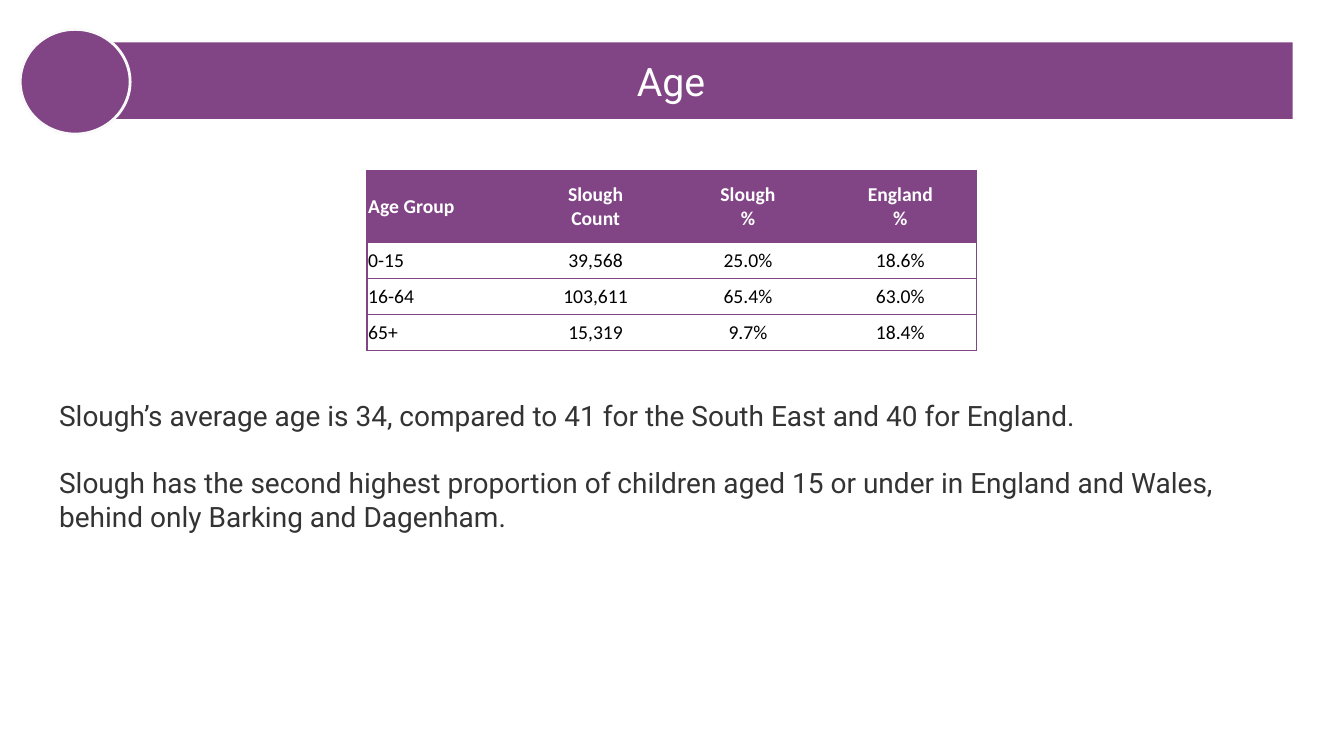
"""Build the slide on the age profile of Slough."""
from dataclasses import dataclass

from lxml import etree
from pptx import Presentation
from pptx.dml.color import RGBColor
from pptx.enum import shapes, text
from pptx.oxml import ns
from pptx.util import Cm, Length, Pt

PURPLE = RGBColor(0x81, 0x44, 0x85)
WHITE = RGBColor(0xFF, 0xFF, 0xFF)
OFF_WHITE = RGBColor(0xFA, 0xFA, 0xFA)
BLACK = RGBColor(0x00, 0x00, 0x00)
DARK_GREY = RGBColor(0x33, 0x33, 0x33)

LEFT, CENTRE = text.PP_ALIGN.LEFT, text.PP_ALIGN.CENTER


@dataclass(frozen=True)
class Style:
    """Look of a run of text."""
    font: str
    size: Length
    colour: RGBColor
    bold: bool = False


@dataclass(frozen=True)
class Box:
    """Place and size of an element."""
    left: Length
    top: Length
    width: Length
    height: Length


TITLE = Style("Roboto", Pt(28), WHITE)
FINDING = Style("Roboto", Pt(20), DARK_GREY)
HEADING = Style("Calibri", Pt(14), WHITE, True)
FIGURE = Style("Calibri", Pt(14), BLACK)

BANNER_BOX = Box(Cm(1.24), Cm(1.07), Cm(31.34), Cm(1.93))
BADGE_BOX = Box(Cm(0.51), Cm(0.74), Cm(2.77), Cm(2.64))
AGE_TABLE_BOX = Box(Cm(9.25), Cm(4.29), Cm(15.36), Cm(4.52))
FINDINGS_BOX = Box(Cm(1.24), Cm(9.91), Cm(31.34), Cm(4.52))
HEADING_HEIGHT, GROUP_HEIGHT = Cm(1.81), Cm(0.91)

AGE_GROUPS = [
    ["Age Group", "Slough\nCount", "Slough\n%", "England\n%"],
    ["0-15", "39,568", "25.0%", "18.6%"],
    ["16-64", "103,611", "65.4%", "63.0%"],
    ["65+", "15,319", "9.7%", "18.4%"],
]
FINDINGS = [
    "Slough’s average age is 34, compared to 41 for the South East and 40 for England.",
    "Slough has the second highest proportion of children aged 15 or under in England "
    "and Wales, behind only Barking and Dagenham.",
]


def write(frame, lines: list[str], style: Style, align=LEFT, gap: Length = Pt(0)) -> None:
    """Write one paragraph per line, with a gap between them."""
    frame.word_wrap = True
    for index, line in enumerate(lines):
        paragraph = frame.add_paragraph() if index else frame.paragraphs[0]
        paragraph.alignment = align
        if index and gap:
            paragraph.space_before = gap
        run = paragraph.add_run()
        run.text = line
        run.font.name, run.font.size = style.font, style.size
        run.font.bold, run.font.color.rgb = style.bold, style.colour


def add_purple_shape(slide, kind, box: Box):
    """Add a flat purple shape without outline."""
    shape = slide.shapes.add_shape(kind, box.left, box.top, box.width, box.height)
    shape.shadow.inherit = False
    shape.fill.solid()
    shape.fill.fore_color.rgb = PURPLE
    shape.line.fill.background()
    return shape


def set_borders(cell, visible_sides: str) -> None:
    """Rule the named sides of a cell in purple and clear the others."""
    properties = cell._tc.get_or_add_tcPr()
    for position, side in enumerate("LRTB"):
        border = etree.Element(ns.qn(f"a:ln{side}"), w=str(Pt(1)))
        if side in visible_sides:
            fill = etree.SubElement(border, ns.qn("a:solidFill"))
            etree.SubElement(fill, ns.qn("a:srgbClr"), val=str(PURPLE))
        else:
            etree.SubElement(border, ns.qn("a:noFill"))
        properties.insert(position, border)


def add_age_table(slide, box: Box) -> None:
    """Add the table of age groups."""
    last = len(AGE_GROUPS[0]) - 1
    table = slide.shapes.add_table(len(AGE_GROUPS), last + 1, box.left, box.top,
                                   box.width, box.height).table
    table.horz_banding = False
    for row, values in enumerate(AGE_GROUPS):
        table.rows[row].height = GROUP_HEIGHT if row else HEADING_HEIGHT
        for column, value in enumerate(values):
            cell = table.cell(row, column)
            cell.margin_left = cell.margin_right = cell.margin_top = Cm(0.03)
            cell.margin_bottom = Cm(0)
            cell.vertical_anchor = text.MSO_ANCHOR.MIDDLE
            if row:
                cell.fill.background()
            else:
                cell.fill.solid()
                cell.fill.fore_color.rgb = PURPLE
            write(cell.text_frame, value.split("\n"), FIGURE if row else HEADING,
                  CENTRE if column else LEFT)
            set_borders(cell, "TB" + {0: "L", last: "R"}.get(column, ""))


def main() -> None:
    """Build and save the slide."""
    deck = Presentation()
    deck.slide_width, deck.slide_height = Cm(33.87), Cm(19.05)
    slide = deck.slides.add_slide(deck.slide_layouts[6])

    banner = add_purple_shape(slide, shapes.MSO_SHAPE.RECTANGLE, BANNER_BOX)
    banner.text_frame.vertical_anchor = text.MSO_ANCHOR.MIDDLE
    write(banner.text_frame, ["Age"], TITLE, CENTRE)

    add_age_table(slide, AGE_TABLE_BOX)

    findings = slide.shapes.add_textbox(FINDINGS_BOX.left, FINDINGS_BOX.top,
                                        FINDINGS_BOX.width, FINDINGS_BOX.height)
    write(findings.text_frame, FINDINGS, FINDING, gap=Pt(24))

    badge = add_purple_shape(slide, shapes.MSO_SHAPE.FLOWCHART_CONNECTOR, BADGE_BOX)
    badge.line.color.rgb = OFF_WHITE
    badge.line.width = Pt(2)

    deck.save("out.pptx")


if __name__ == "__main__":
    main()
